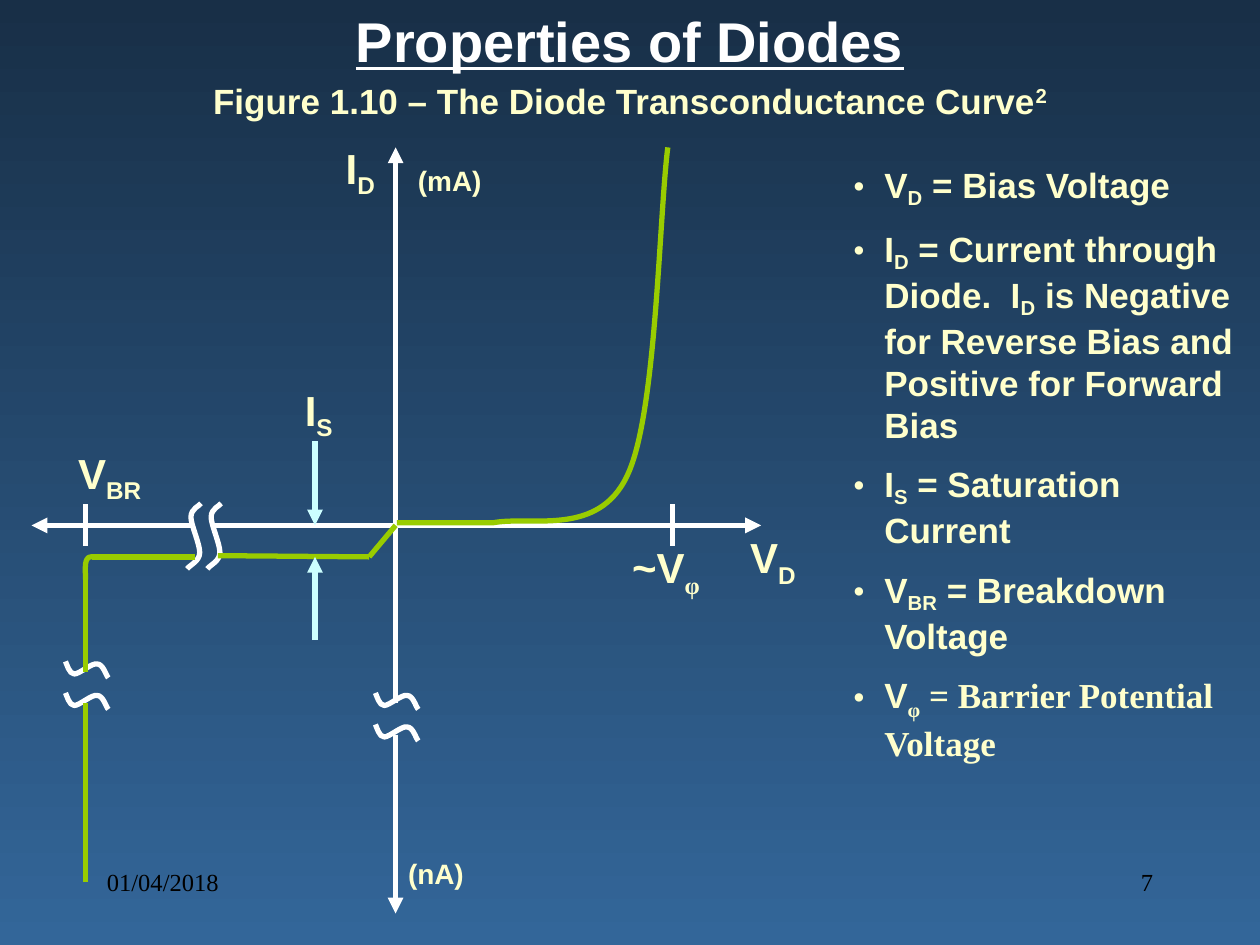
from dataclasses import dataclass

from lxml.etree import SubElement
from pptx import Presentation
from pptx.dml.color import RGBColor
from pptx.enum.shapes import MSO_CONNECTOR
from pptx.enum.text import MSO_AUTO_SIZE, PP_ALIGN
from pptx.oxml.ns import qn
from pptx.util import Inches, Pt

COLORS = {
    "top": "182F47",
    "base": "336699",
    "white": "FFFFFF",
    "cream": "FFFFCC",
    "green": "99CC00",
    "cyan": "CCFFFF",
    "black": "000000",
}
Point = tuple[float, float]


@dataclass
class Label:
    text: str
    left: float
    top: float
    width: float
    height: float = 0.5
    size: int = 24


@dataclass
class Stroke:
    start: Point
    end: Point
    color: str = "white"
    arrow: bool = False


@dataclass
class Curve:
    points: list[Point]
    color: str = "white"
    lines: int = 0
    turn: int = 0


def rgb(name: str) -> RGBColor:
    return RGBColor.from_string(COLORS[name])


def add_text(slide, text: str, left: float, top: float, width: float, height: float, *,
             size: int = 20, color: str = "cream", font: str = "Arial", bold: bool = True,
             line: bool = False, align=PP_ALIGN.CENTER, shift: int = -25,
             bullet: bool = False, gap: bool = True) -> None:
    box = slide.shapes.add_textbox(*map(Inches, (left, top, width, height)))
    frame = box.text_frame
    frame.word_wrap = True
    frame.auto_size = MSO_AUTO_SIZE.SHAPE_TO_FIT_TEXT if gap else MSO_AUTO_SIZE.NONE
    for row, words in enumerate(text.split("\n")):
        para = frame.paragraphs[0] if row == 0 else frame.add_paragraph()
        para.alignment = align
        props = para._p.get_or_add_pPr()
        if gap:
            before = SubElement(props, qn("a:spcBef"))
            SubElement(before, qn("a:spcPct"), val="50000")
        if bullet:
            props.set("marL", str(Inches(0.25)))
            props.set("indent", str(Inches(-0.25)))
            SubElement(props, qn("a:buFont"), typeface="Times New Roman")
            SubElement(props, qn("a:buChar"), char="•")
        face = font
        for spot, piece in enumerate(words.split("|")):
            if not piece:
                continue
            run = para.add_run()
            run.text = piece
            if piece == "φ":
                face = "Times New Roman"
            run.font.name = face
            run.font.size = Pt(size)
            run.font.bold = bold
            run.font.underline = line
            run.font.color.rgb = rgb(color)
            if spot % 2:
                base = -25 if piece == "φ" else shift
                run._r.get_or_add_rPr().set("baseline", str(base * 1000))


def add_stroke(slide, stroke: Stroke) -> None:
    ends = map(Inches, (*stroke.start, *stroke.end))
    link = slide.shapes.add_connector(MSO_CONNECTOR.STRAIGHT, *ends)
    link.line.color.rgb = rgb(stroke.color)
    link.line.width = Pt(3)
    if stroke.arrow:
        SubElement(link.line._get_or_add_ln(), qn("a:tailEnd"), type="triangle")
    SubElement(link._element.spPr, qn("a:effectLst"))


def add_curve(slide, curve: Curve) -> None:
    spots = [(Inches(x), Inches(y)) for x, y in curve.points]
    pen = slide.shapes.build_freeform(*spots[0], scale=1.0)
    pen.add_line_segments(spots[1:], close=False)
    shape = pen.convert_to_shape()
    legs = list(shape._element.iter(qn("a:lnTo")))[curve.lines:]
    for first in range(0, len(legs), 3):
        bend = SubElement(legs[first].getparent(), qn("a:cubicBezTo"))
        for leg in legs[first:first + 3]:
            bend.append(leg[0])
            leg.getparent().remove(leg)
    shape.rotation = curve.turn
    shape.shadow.inherit = False
    shape.fill.background()
    shape.line.color.rgb = rgb(curve.color)
    shape.line.width = Pt(3)


def move(points: list[Point], left: float, top: float) -> list[Point]:
    return [(left + x, top + y) for x, y in points]


WAVE = [(0, 0), (0.01, 0.02), (0.03, 0.1), (0.07, 0.1), (0.11, 0.1),
        (0.21, 0.01), (0.25, 0.02), (0.3, 0.02), (0.32, 0.11), (0.34, 0.13)]
BEND = [(0, 0), (0.02, 0.01), (0.04, 0.08), (0.11, 0.08), (0.17, 0.08),
        (0.32, 0.01), (0.39, 0.01), (0.46, 0.01), (0.49, 0.09), (0.52, 0.11)]
AXIS_X, AXIS_Y = 3.14, 4.17
BREAK_X, LEAK_Y = 0.68, 4.42

PARTS = [
    Stroke((AXIS_X, 4.08), (AXIS_X, 1.17), arrow=True),
    Stroke((AXIS_X, 5.83), (AXIS_X, 7.25), arrow=True),
    Stroke((AXIS_X, 4.08), (AXIS_X, 5.58)),
    *[Curve(move(WAVE, x, y + gap)) for x, y in ((2.98, 5.5), (0.52, 5.25)) for gap in (0, 0.25)],
    *[Curve(move(BEND, x, 4.2), turn=90) for x in (1.44, 1.28)],
    Stroke((AXIS_X, AXIS_Y), (6.04, AXIS_Y), arrow=True),
    Stroke((1.54, AXIS_Y), (0.25, AXIS_Y), arrow=True),
    Stroke((AXIS_X, AXIS_Y), (1.7, AXIS_Y)),
    Curve([(3.15, 4.15), (3.91, 4.15), (4.21, 4.09), (4.75, 4.27), (4.98, 3.77),
           (5.21, 3.29), (5.23, 1.72), (5.3, 1.17)], "green", lines=1),
    Stroke((AXIS_X, AXIS_Y), (2.93, LEAK_Y), "green"),
    Curve([(2.93, LEAK_Y), (1.73, 4.41)], "green", lines=1),
    Curve([(1.55, LEAK_Y), (0.73, LEAK_Y)], "green", lines=1),
    Curve([(0.77, 4.42), (0.75, 4.42), (0.7, 4.41), (0.69, 4.44),
           (0.67, 4.47), (0.68, 4.57), (0.68, 4.6)], "green"),
    Stroke((BREAK_X, 4.58), (BREAK_X, 5.33), "green"),
    Stroke((BREAK_X, 5.58), (BREAK_X, 7), "green"),
    *[Stroke((x, 4), (x, 4.33)) for x in (BREAK_X, 5.34)],
    Stroke((2.5, 5.08), (2.5, LEAK_Y), "cyan", True),
    Stroke((2.5, 3.5), (2.5, AXIS_Y), "cyan", True),
]

LABELS = [
    Label("V|D", 5.77, 4.17, 0.73),
    Label("I|D", 2.58, 1.08, 0.56),
    Label("(mA)", 3.14, 1.25, 0.86, 0.37, 16),
    Label("(nA)", 3.09, 6.75, 0.74, 0.37, 16),
    Label("V|BR", 0.41, 3.5, 0.92),
    Label("~V|φ", 4.91, 4.25, 0.75, 0.9),
    Label("I|S", 2.25, 3, 0.56),
]

NOTES = "\n".join([
    "V|D| = Bias Voltage",
    "I|D| = Current through Diode.  I|D| is Negative for Reverse Bias and Positive for Forward Bias",
    "I|S| = Saturation Current",
    "V|BR| = Breakdown Voltage",
    "V|φ| = Barrier Potential Voltage",
])


def main() -> None:
    deck = Presentation()
    deck.slide_width, deck.slide_height = Inches(10), Inches(7.5)
    slide = deck.slides.add_slide(deck.slide_layouts[6])
    fill = slide.background.fill
    fill.gradient()
    fill.gradient_angle = 270
    for stop, place, name in zip(fill.gradient_stops, (0, 1), ("top", "base")):
        stop.position = place
        stop.color.rgb = rgb(name)

    add_text(slide, "Properties of Diodes", 1, 0, 8, 0.63, size=32, color="white", line=True)
    add_text(slide, "Figure 1.10 – The Diode Transconductance Curve|2", 1.5, 0.58, 7, 0.43, shift=30)
    add_text(slide, NOTES, 6.67, 1.25, 3.33, 4.77, align=PP_ALIGN.LEFT, shift=-20, bullet=True)
    for part in PARTS:
        if isinstance(part, Stroke):
            add_stroke(slide, part)
        else:
            add_curve(slide, part)
    for label in LABELS:
        add_text(slide, label.text, label.left, label.top, label.width, label.height, size=label.size)
    for text, left, align in (("01/04/2018", 0.75, PP_ALIGN.LEFT), ("7", 7.17, PP_ALIGN.RIGHT)):
        add_text(slide, text, left, 6.83, 2.08, 0.5, size=14, color="black",
                 font="Times New Roman", bold=False, align=align, gap=False)
    deck.save("out.pptx")


if __name__ == "__main__":
    main()
